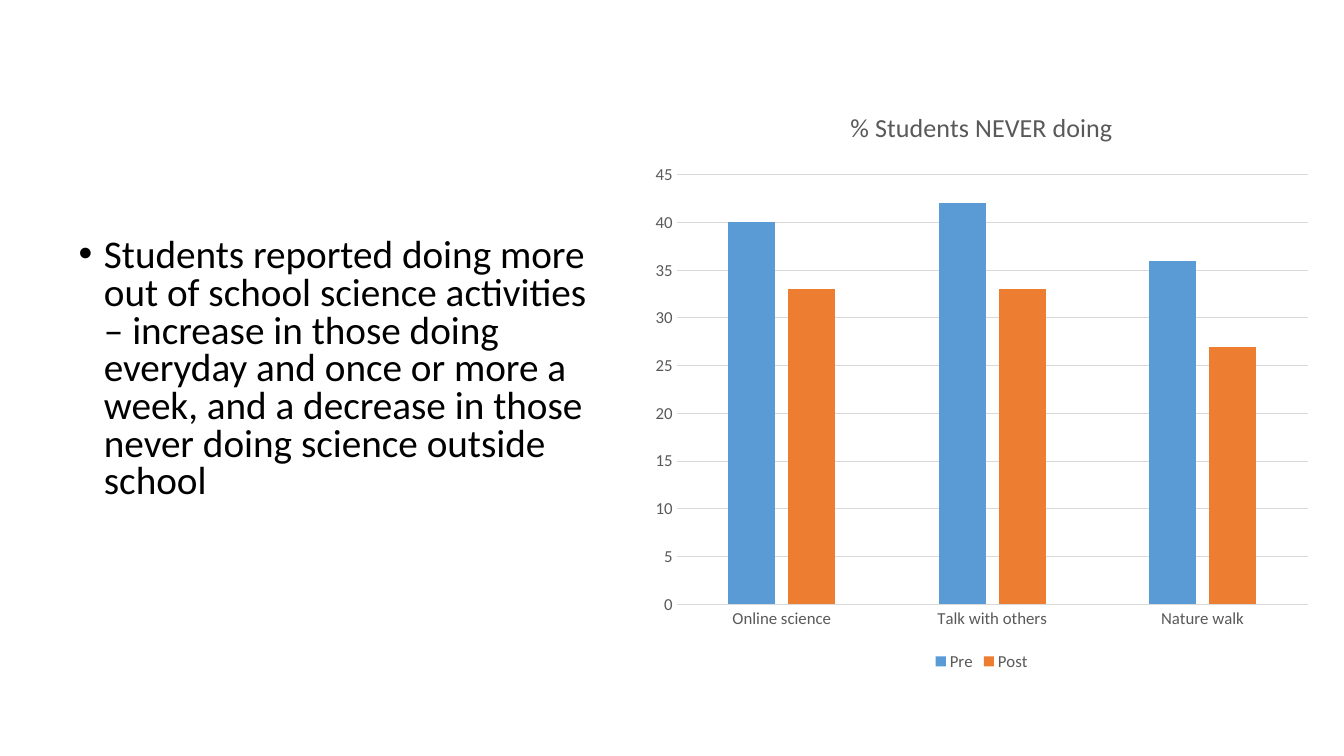
import pptx
import pptx.chart.data
import pptx.dml.color
import pptx.enum.chart
import pptx.util
import lxml.etree

Cm = pptx.util.Cm
Pt = pptx.util.Pt
enum = pptx.enum.chart


def tint(code):
    return pptx.dml.color.RGBColor.from_string(code)


class Deck:
    face = "Calibri"
    ink = "000000"
    gray = "595959"
    rule = "D9D9D9"

    def __init__(self, wide, high):
        self.show = pptx.Presentation()
        self.show.slide_width = Cm(wide)
        self.show.slide_height = Cm(high)
        self.slide = self.show.slides.add_slide(self.show.slide_layouts[6])

    def style(self, font, size, color):
        font.name = self.face
        font.size = Pt(size)
        font.bold = False
        font.color.rgb = tint(color)

    def bullet(self, text, size, box):
        frame = self.slide.shapes.add_textbox(*map(Cm, box)).text_frame
        frame.word_wrap = True
        para = frame.paragraphs[0]
        para.line_spacing = 0.8
        para.space_before = Pt(10)
        # Hanging indent and bullet sign
        props = para._p.get_or_add_pPr()
        props.set("marL", str(Cm(0.64)))
        props.set("indent", str(Cm(-0.64)))
        space = pptx.oxml.ns.qn
        mark = lxml.etree.SubElement(props, space("a:buFont"))
        mark.set("typeface", "Arial")
        mark = lxml.etree.SubElement(props, space("a:buChar"))
        mark.set("char", "•")
        run = para.add_run()
        run.text = text
        self.style(run.font, size, self.ink)

    def line(self, form):
        form.line.color.rgb = tint(self.rule)
        form.line.width = Pt(0.75)

    def columns(self, title, cats, rows, box):
        data = pptx.chart.data.CategoryChartData()
        data.categories = cats
        for name, vals, color in rows:
            data.add_series(name, vals)
        chart = self.slide.shapes.add_chart(
            enum.XL_CHART_TYPE.COLUMN_CLUSTERED, *map(Cm, box), data).chart
        self.style(chart.font, 12, self.gray)

        # Title and legend
        chart.has_title = True
        run = chart.chart_title.text_frame.paragraphs[0].add_run()
        run.text = title
        self.style(run.font, 18.6, self.gray)
        chart.chart_title.include_in_layout = False
        chart.has_legend = True
        chart.legend.position = enum.XL_LEGEND_POSITION.BOTTOM
        chart.legend.include_in_layout = False
        self.style(chart.legend.font, 12, self.gray)

        # Axes and grid
        for axis in (chart.category_axis, chart.value_axis):
            axis.major_tick_mark = enum.XL_TICK_MARK.NONE
            axis.minor_tick_mark = enum.XL_TICK_MARK.NONE
            self.style(axis.tick_labels.font, 12, self.gray)
        self.line(chart.category_axis.format)
        scale = chart.value_axis
        scale.minimum_scale, scale.maximum_scale, scale.major_unit = 0, 45, 5
        scale.format.line.fill.background()
        self.line(scale.major_gridlines.format)

        # Columns
        plot = chart.plots[0]
        plot.gap_width = 219
        plot.overlap = -27
        plot.vary_by_categories = False
        for bars, (name, vals, color) in zip(plot.series, rows):
            bars.format.fill.solid()
            bars.format.fill.fore_color.rgb = tint(color)


def main():
    deck = Deck(33.87, 19.05)
    deck.bullet(
        "Students reported doing more out of school science activities – "
        "increase in those doing everyday and once or more a week, and a "
        "decrease in those never doing science outside school",
        28, (1.73, 5.89, 13.51, 7.42))
    deck.columns(
        "% Students NEVER doing",
        ["Online science", "Talk with others", "Nature walk"],
        [("Pre", (40, 42, 36), "5B9BD5"), ("Post", (33, 33, 27), "ED7D31")],
        (16.18, 2.21, 17.12, 14.81))
    deck.show.save("out.pptx")


if __name__ == "__main__":
    main()
